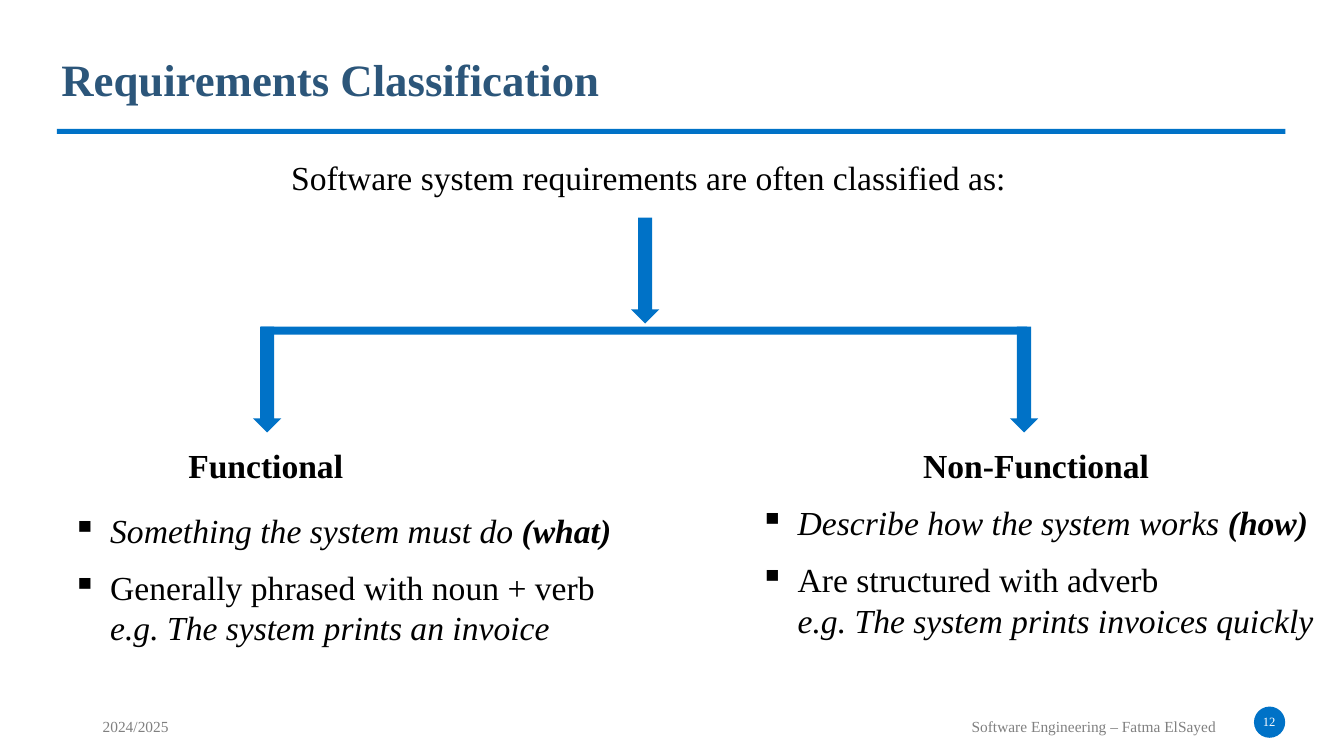
from lxml import etree
from pptx import Presentation
from pptx.dml import color
from pptx.enum import shapes, text
from pptx.oxml import ns
from pptx.util import Pt

FONT = "Times New Roman"
BLUE, NAVY, GRAY, BLACK, WHITE = "0072C7", "2C567A", "808080", "000000", "FFFFFF"
KIND = shapes.MSO_SHAPE


def tint(target, code):
    target.rgb = color.RGBColor.from_string(code)


def style(run, size=24, hue=BLACK, bold=False, slant=False):
    font = run.font
    font.name, font.size = FONT, Pt(size)
    font.bold, font.italic = bold, slant
    tint(font.color, hue)


def frame(slide, box, wrap=False, grow=True):
    body = slide.shapes.add_textbox(*map(Pt, box)).text_frame
    body.word_wrap = wrap
    if grow:
        body.auto_size = text.MSO_AUTO_SIZE.SHAPE_TO_FIT_TEXT
    return body


def label(slide, words, box, wrap=False, before=None, **look):
    para = frame(slide, box, wrap).paragraphs[0]
    if before:
        para.space_before = Pt(before)
    run = para.add_run()
    run.text = words
    style(run, **look)


def solid(slide, kind, box):
    item = slide.shapes.add_shape(kind, *map(Pt, box))
    item.shadow.inherit = False
    item.fill.solid()
    tint(item.fill.fore_color, BLUE)
    item.line.fill.background()


def number(slide, words, box):
    body = frame(slide, box, wrap=True, grow=False)
    body.margin_left = body.margin_right = body.margin_top = body.margin_bottom = 0
    body.vertical_anchor = text.MSO_ANCHOR.MIDDLE
    para = body.paragraphs[0]
    para.alignment = text.PP_ALIGN.CENTER
    run = para.add_run()
    run.text = words
    style(run, size=9, hue=WHITE)


def indent(para, mark):
    props = para._p.get_or_add_pPr()
    props.set("marL", str(Pt(27)))
    props.set("indent", str(Pt(-27 if mark else 0)))
    if mark:
        etree.SubElement(props, ns.qn("a:buChar")).set("char", "▪")
    else:
        etree.SubElement(props, ns.qn("a:buNone"))


def points(slide, box, lead, key, form, case):
    body = frame(slide, box, wrap=True)
    rows = [
        [(lead, {"slant": True}), (key, {"slant": True, "bold": True})],
        [(form, {})],
        [(case, {"slant": True})],
    ]
    for i, row in enumerate(rows):
        para = body.add_paragraph() if i else body.paragraphs[0]
        if i == 0:
            para.space_after = Pt(12)
        indent(para, mark=i < 2)
        for words, look in row:
            run = para.add_run()
            run.text = words
            style(run, **look)


def main():
    deck = Presentation()
    deck.slide_width, deck.slide_height = Pt(960), Pt(540)
    slide = deck.slides.add_slide(deck.slide_layouts[6])

    label(slide, "2024/2025", (66.2, 509, 62, 21), size=11, hue=GRAY)
    label(slide, "Software Engineering – Fatma ElSayed", (686.9, 509, 190, 21),
          size=11, hue=GRAY)
    solid(slide, KIND.OVAL, (895.7, 504.7, 22.3, 22.3))
    solid(slide, KIND.RECTANGLE, (40.6, 92, 877.6, 3.6))
    number(slide, "12", (895, 508.3, 23, 14.4))

    label(slide, "Requirements Classification", (36.7, 33.1, 402.5, 46),
          before=6.4, size=32, hue=NAVY, bold=True)
    label(slide, "Software system requirements are often classified as:",
          (200.9, 108.7, 538.6, 36), wrap=True)
    label(slide, "Functional", (127.4, 313.9, 126, 36), bold=True)
    label(slide, "Non-Functional", (652.3, 313.9, 177.8, 36), bold=True)

    solid(slide, KIND.RECTANGLE, (186.5, 233.3, 547.2, 5.8))
    for left, top in ((450.7, 155.5), (180.7, 233.3), (721.4, 233.3)):
        solid(slide, KIND.DOWN_ARROW, (left, top, 20.2, 75.6))

    points(slide, (44.6, 360.7, 447.8, 106.6),
           "Something the system must do ", "(what)",
           "Generally phrased with noun + verb",
           "e.g. The system prints an invoice")
    points(slide, (535.7, 355, 414.7, 106.6),
           "Describe how the system works ", "(how)",
           "Are structured with adverb",
           "e.g. The system prints invoices quickly")
    deck.save("out.pptx")


if __name__ == "__main__":
    main()
